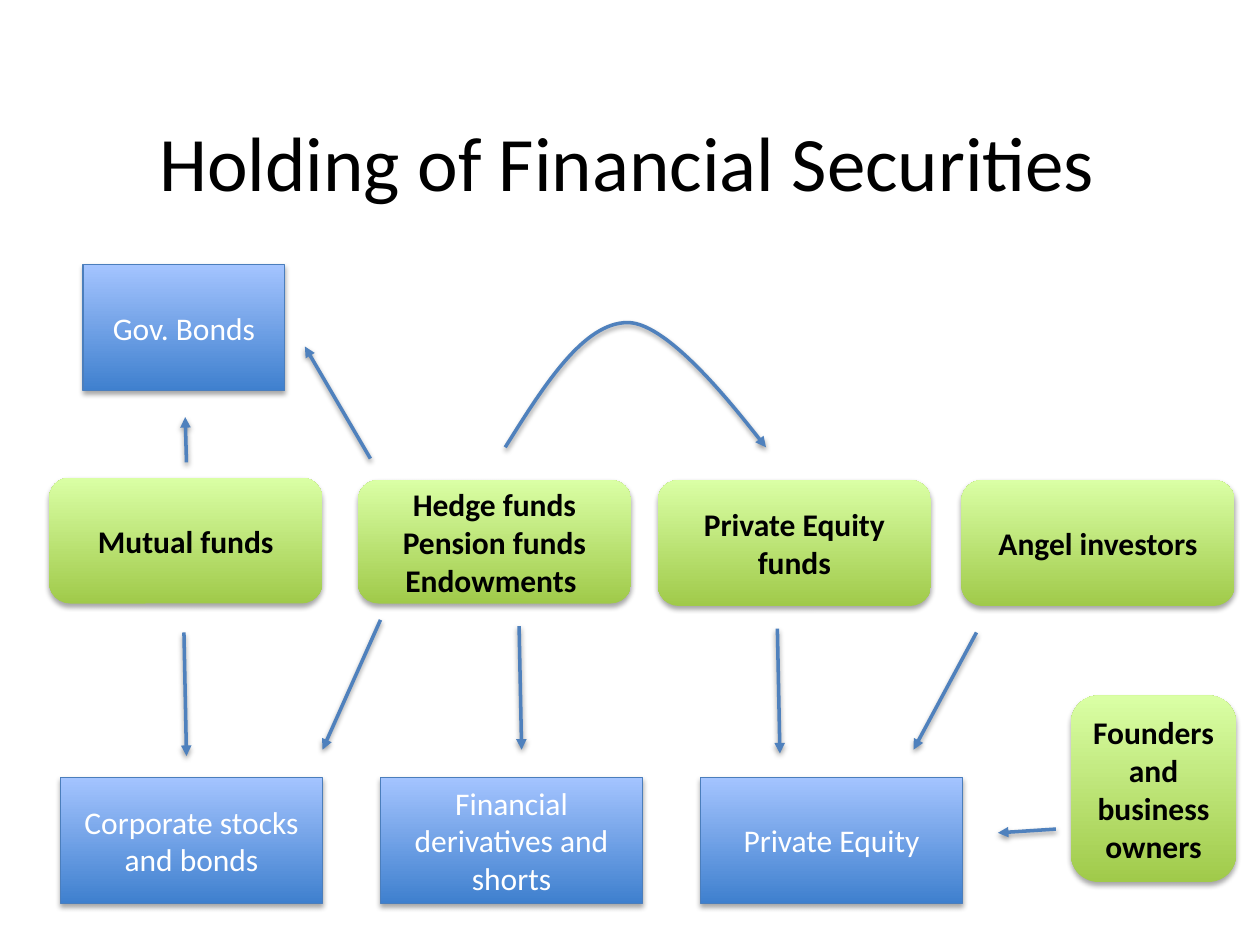
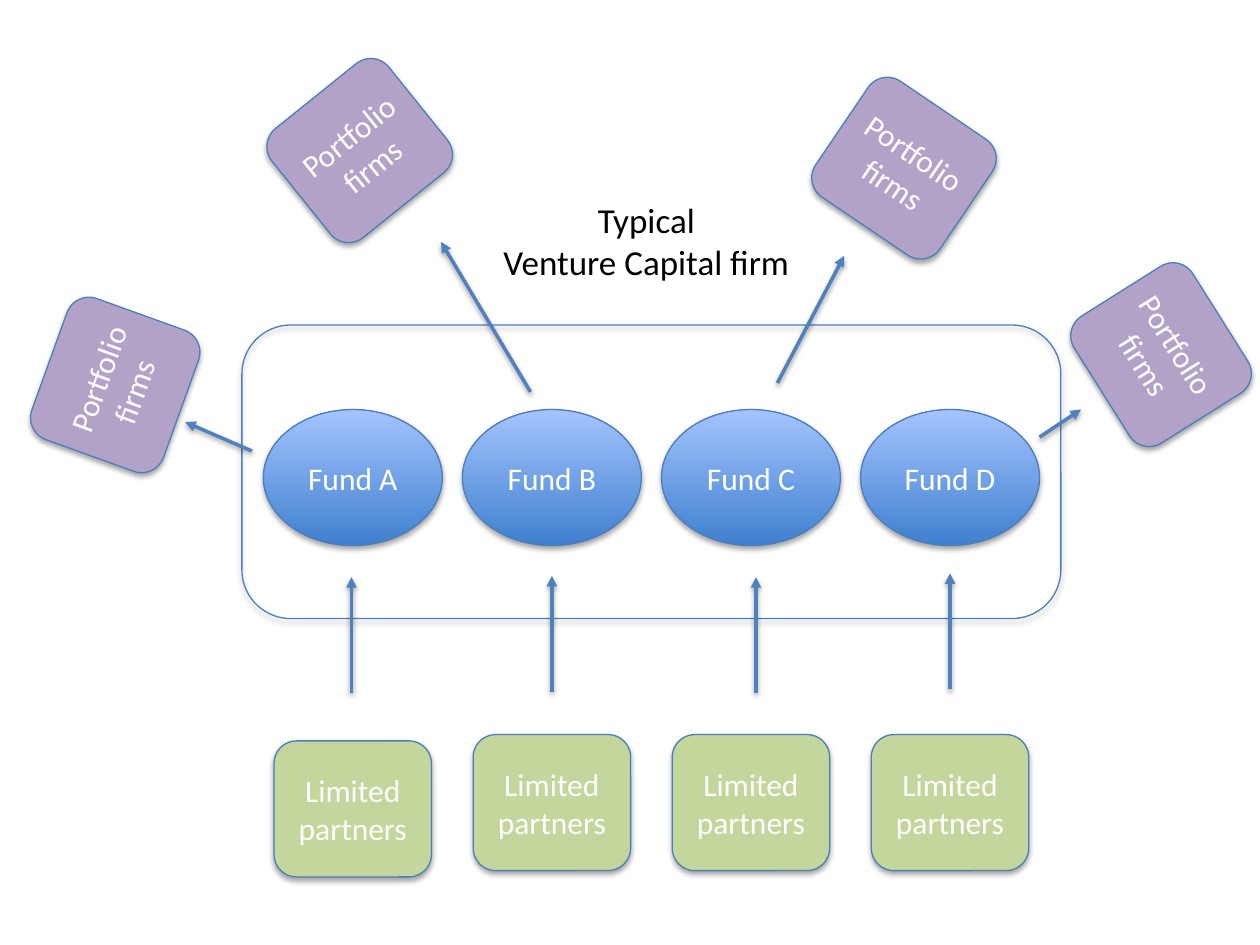
from collections import namedtuple

from lxml import etree
from pptx import Presentation
from pptx.dml.color import RGBColor
from pptx.enum.shapes import MSO_CONNECTOR, MSO_SHAPE
from pptx.enum.text import MSO_ANCHOR, PP_ALIGN
from pptx.oxml.ns import qn
from pptx.util import Inches, Pt

Box = namedtuple("Box", "left top width height")
Style = namedtuple("Style", "fills line ink bold")

FONT = "Calibri"
BLACK, WHITE = "000000", "FFFFFF"
EDGE, ARROW = "4B7EBC", "4F81BD"
BLUE = Style(("3F80CE", "A4C4FF"), EDGE, WHITE, False)
LIME = Style(("A0CA4A", "DAFFA5"), None, BLACK, True)
SAGE = Style(("C3D69B",), EDGE, WHITE, False)
LILAC = Style(("B3A2C7",), EDGE, WHITE, False)
HOLLOW = Style((), EDGE, BLACK, False)

COLUMN_PITCH = 1.58


def color(code):
    """Turn a hex string into a colour."""
    return RGBColor.from_string(code)


def set_box(shape, box):
    """Move and size a shape to a box in inches."""
    shape.left, shape.top, shape.width, shape.height = map(Inches, box)


def add_shadow(shape, alpha, distance):
    """Give a shape or connector a soft shadow falling straight down."""
    effects = etree.SubElement(shape._element.spPr, qn("a:effectLst"))
    shadow = etree.SubElement(
        effects, qn("a:outerShdw"), blurRad=str(Pt(3.1)), dist=str(Pt(distance)),
        dir="5400000", rotWithShape="0")
    tint = etree.SubElement(shadow, qn("a:srgbClr"), val=BLACK)
    etree.SubElement(tint, qn("a:alpha"), val=str(alpha * 1000))


def write_text(frame, text, size, ink, bold=False):
    """Write centred paragraphs in one font."""
    frame.text = text
    frame.word_wrap = True
    frame.vertical_anchor = MSO_ANCHOR.MIDDLE
    for para in frame.paragraphs:
        para.alignment = PP_ALIGN.CENTER
        font = para.font
        font.name, font.size, font.bold = FONT, Pt(size), bold
        font.color.rgb = color(ink)


def add_title(page, box, text, size):
    """Place and format the title placeholder."""
    title = page.shapes.title
    set_box(title, box)
    write_text(title.text_frame, text, size, BLACK)


def add_node(page, kind, box, style, text="", rotation=0):
    """Draw one labelled shape of the diagram."""
    node = page.shapes.add_shape(kind, *map(Inches, box))
    node.rotation = rotation
    if len(style.fills) == 2:
        node.fill.gradient()
        node.fill.gradient_angle = 90
        for stop, code in zip(node.fill.gradient_stops, style.fills):
            stop.color.rgb = color(code)
    elif style.fills:
        node.fill.solid()
        node.fill.fore_color.rgb = color(style.fills[0])
    else:
        node.fill.background()
    if style.line:
        node.line.color.rgb = color(style.line)
        node.line.width = Pt(0.75)
    else:
        node.line.fill.background()
    add_shadow(node, 35, 1.8)
    if text:
        write_text(node.text_frame, text, 18, style.ink, style.bold)


def format_arrow(arrow):
    """Give a line its colour, arrowhead and shadow."""
    arrow.line.color.rgb = color(ARROW)
    arrow.line.width = Pt(2)
    outline = arrow._element.spPr.find(qn("a:ln"))
    etree.SubElement(outline, qn("a:tailEnd"), type="triangle")
    add_shadow(arrow, 38, 1.6)


def add_arrows(page, box, routes):
    """Draw straight arrows, given as start and end offsets in a box."""
    for x1, y1, x2, y2 in routes:
        ends = (box.left + x1, box.top + y1, box.left + x2, box.top + y2)
        format_arrow(page.shapes.add_connector(
            MSO_CONNECTOR.STRAIGHT, *map(Inches, ends)))


def add_curved_arrow(page, box):
    """Draw an arched arrow that fills a box."""
    left, top, width, height = box
    steps = [(0.15, 0.5), (0.3, 0), (0.47, 0), (0.63, 0), (1, 1), (1, 1)]
    builder = page.shapes.build_freeform(
        Inches(left), Inches(top + height), scale=1.0)
    builder.add_line_segments(
        [(Inches(left + x * width), Inches(top + y * height)) for x, y in steps],
        close=False)
    arch = builder.convert_to_shape()
    segments = list(arch._element.iter(qn("a:lnTo")))
    outline = segments[0].getparent()
    for start in range(0, len(segments), 3):
        curve = etree.SubElement(outline, qn("a:cubicBezTo"))
        for segment in segments[start:start + 3]:
            curve.append(segment[0])
            outline.remove(segment)
    arch.fill.background()
    format_arrow(arch)


def add_securities(page, box):
    """Draw the equal row of securities along the bottom."""
    names = ["Corporate stocks and bonds", "Financial derivatives and shorts",
             "Private Equity"]
    for index, name in enumerate(names):
        add_node(page, MSO_SHAPE.RECTANGLE,
                 Box(box.left + 2.54 * index, box.top, 2.08, box.height),
                 BLUE, name)


def add_holders(page, box):
    """Draw the row of investors and the founders below its right end."""
    holders = [
        (0, 0, 2.17, 1, "Mutual funds"),
        (2.45, 0.02, 2.17, 0.98, "Hedge funds\nPension funds\nEndowments "),
        (4.83, 0.02, 2.17, 1, "Private Equity funds"),
        (7.24, 0.02, 2.17, 1, "Angel investors"),
        (8.11, 1.73, 1.31, 1.48, "Founders and business owners"),
    ]
    for x, y, width, height, name in holders:
        add_node(page, MSO_SHAPE.ROUNDED_RECTANGLE,
                 Box(box.left + x, box.top + y, width, height), LIME, name)


def build_holdings(page):
    """Build the slide on who holds which securities."""
    add_title(page, Box(0.48, 0.65, 9, 1.25), "Holding of Financial Securities", 44)
    add_node(page, MSO_SHAPE.RECTANGLE, Box(0.66, 2.1, 1.6, 1), BLUE, "Gov. Bonds")
    add_holders(page, Box(0.39, 3.79, 9.42, 3.21))
    add_securities(page, Box(0.48, 6.17, 7.16, 1))
    add_arrows(page, Box(1.46, 2.75, 1.48, 0.92),
               [(0.02, 0.92, 0.01, 0.56), (1.48, 0.89, 0.96, 0)])
    add_arrows(page, Box(1.46, 4.92, 6.92, 1.69), [
        (0, 0.1, 0.02, 1.08),
        (1.56, 0, 1.1, 1.03),
        (2.66, 0.05, 2.68, 1.03),
        (4.71, 0.07, 4.73, 1.06),
        (6.29, 0.1, 5.79, 1.03),
        (6.92, 1.66, 6.46, 1.69),
    ])
    add_curved_arrow(page, Box(4.01, 2.56, 2.07, 0.99))


def add_column_row(page, box, kind, size, style, names, drops=(0, 0, 0, 0)):
    """Draw four shapes centred on the columns of a box."""
    width, height = size
    first = box.left + box.width / 2 - 1.5 * COLUMN_PITCH - width / 2
    for index, (name, drop) in enumerate(zip(names, drops)):
        add_node(page, kind,
                 Box(first + COLUMN_PITCH * index, box.top + drop, width, height),
                 style, name)


def add_firm(page, box):
    """Draw the firm's frame with its four funds."""
    funds = Box(box.left, box.top + 0.67, box.width, 1.08)
    add_column_row(page, funds, MSO_SHAPE.OVAL, (1.42, 1.08), BLUE,
                   [f"Fund {letter}" for letter in "ABCD"])
    add_node(page, MSO_SHAPE.ROUNDED_RECTANGLE, box, HOLLOW)


def add_partners(page, box):
    """Draw the limited partners and their arrows up to the funds."""
    add_column_row(page, box, MSO_SHAPE.ROUNDED_RECTANGLE, (1.25, 1.08), SAGE,
                   ["Limited partners"] * 4, (0.05, 0, 0, 0))
    starts = [(0.87, -0.33), (2.46, -0.34), (4.08, -0.33), (5.62, -0.36)]
    add_arrows(page, box, [(x, y, x, y - 0.92) for x, y in starts])


def add_portfolio(page, box):
    """Draw the tilted portfolio firms and the arrows that reach them."""
    tilted = [(0, 1.86, 289.8), (1.94, 0, 321.2), (6.26, 0.14, 34.1),
              (8.3, 1.62, 57.8)]
    for x, y, rotation in tilted:
        add_node(page, MSO_SHAPE.ROUNDED_RECTANGLE,
                 Box(box.left + x, box.top + y, 1.19, 1.11),
                 LILAC, "Portfolio firms", rotation)
    add_arrows(page, box, [
        (1.68, 2.94, 1.15, 2.71),
        (3.89, 2.47, 3.18, 1.28),
        (5.85, 2.4, 6.38, 1.39),
        (7.93, 2.83, 8.26, 2.61),
    ])


def build_venture_firm(page):
    """Build the slide on a venture capital firm's structure."""
    add_title(page, Box(3.67, 1.45, 2.92, 0.91), "Typical\vVenture Capital firm", 20)
    add_firm(page, Box(1.92, 2.58, 6.5, 2.33))
    add_partners(page, Box(1.92, 5.83, 6.5, 1.13))
    add_portfolio(page, Box(0.32, 0.64, 9.49, 2.97))


def main():
    """Build and save the deck."""
    deck = Presentation()
    deck.slide_width, deck.slide_height = Inches(10), Inches(7.5)
    for build in (build_holdings, build_venture_firm):
        build(deck.slides.add_slide(deck.slide_layouts[5]))
    deck.save("out.pptx")


if __name__ == "__main__":
    main()
